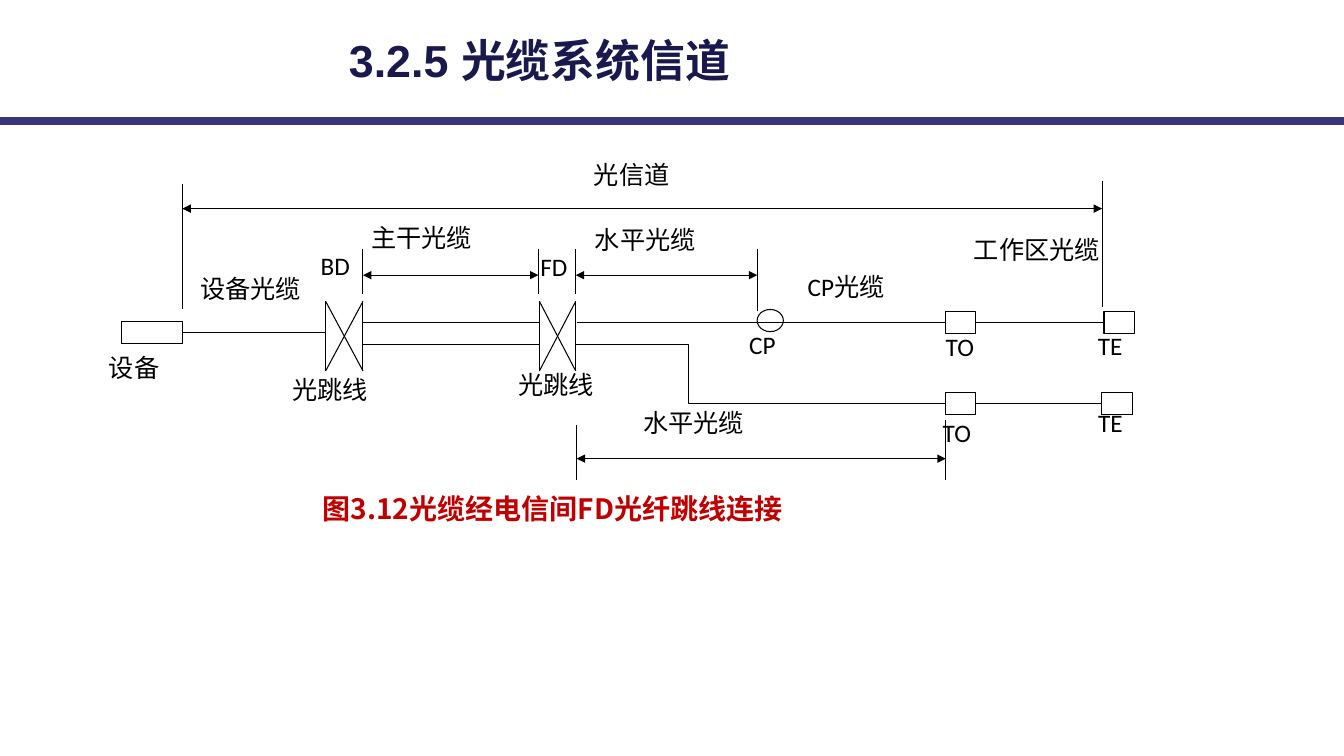
from dataclasses import dataclass

from lxml.etree import SubElement
from pptx import Presentation
from pptx.dml.color import RGBColor
from pptx.enum.shapes import MSO_CONNECTOR, MSO_SHAPE
from pptx.enum.text import MSO_ANCHOR, MSO_AUTO_SIZE, PP_ALIGN
from pptx.oxml.ns import qn
from pptx.shapes.autoshape import Shape
from pptx.shapes.connector import Connector
from pptx.slide import Slide
from pptx.text.text import _Paragraph as Paragraph
from pptx.util import Inches, Pt

CJK_FONT = "Noto Sans CJK SC"
BLACK, WHITE, RED = "000000", "FFFFFF", "C00000"
NAVY, PURPLE = "19194D", "3A357B"
LEFT_SIDE, RIGHT_SIDE = 1, 3


@dataclass
class Label:
    text: str
    left: float
    top: float
    width: float
    height: float = 0.49
    align: PP_ALIGN = PP_ALIGN.JUSTIFY
    size: int = 18
    font: str = "Calibri"
    color: str = BLACK
    bold: bool = False


@dataclass
class Dimension:
    """A double arrow between two extension lines."""
    left: float
    right: float
    y: float
    left_span: tuple[float, float]
    right_span: tuple[float, float]


LABELS = [
    Label("光信道", 5.89, 1.6, 1.05, 0.46),
    Label("主干光缆", 3.68, 2.23, 1.31),
    Label("水平光缆", 5.9, 2.24, 1.32),
    Label("工作区光缆", 9.66, 2.34, 1.26, 0.75),
    Label("BD", 3.18, 2.5, 0.42),
    Label("FD", 5.36, 2.51, 0.42),
    Label("CP光缆", 8.01, 2.71, 1.15),
    Label("设备光缆", 1.85, 2.73, 1.27, align=PP_ALIGN.CENTER),
    Label("CP", 7.43, 3.29, 0.42, 0.39),
    Label("TO", 9.38, 3.31, 0.42, 0.38),
    Label("TE", 10.89, 3.3, 0.46, 0.43),
    Label("设备", 1.08, 3.51, 0.73),
    Label("光跳线", 2.9, 3.73, 1.06, 0.38),
    Label("光跳线", 5.14, 3.68, 0.93),
    Label("水平光缆", 6.38, 4.06, 1.63),
    Label("TO", 9.35, 4.16, 0.42),
    Label("TE", 10.89, 4.06, 0.42),
    Label("图3.12光缆经电信间FD光纤跳线连接", 3.2, 4.9, 5.71, 0.58,
          size=20, font=CJK_FONT, color=RED, bold=True),
]

DIMENSIONS = [
    Dimension(1.81, 10.93, 2.07, (1.83, 3.07), (1.8, 3.05)),
    Dimension(3.6, 5.34, 2.73, (2.47, 2.92), (2.47, 2.92)),
    Dimension(5.71, 7.51, 2.73, (2.47, 2.92), (2.47, 3.09)),
    Dimension(5.72, 9.38, 4.55, (4.22, 4.76), (4.17, 4.76)),
]


def rgb(value: str) -> RGBColor:
    return RGBColor.from_string(value)


def format_text(para: Paragraph, font: str, size: int, color: str, bold: bool) -> None:
    for span in para.runs:
        span.font.name = font
        span.font.size = Pt(size)
        span.font.bold = bold
        span.font.color.rgb = rgb(color)
        SubElement(span.font._element, qn("a:ea"), typeface=CJK_FONT)


def add_box(page: Slide, kind: MSO_SHAPE, left: float, top: float,
            width: float, height: float, line: str = BLACK) -> Shape:
    box = page.shapes.add_shape(kind, Inches(left), Inches(top), Inches(width), Inches(height))
    box.shadow.inherit = False
    box.fill.solid()
    box.fill.fore_color.rgb = rgb(WHITE)
    box.line.color.rgb = rgb(line)
    box.line.width = Pt(0.75)
    return box


def add_label(page: Slide, label: Label) -> None:
    box = add_box(page, MSO_SHAPE.RECTANGLE, label.left, label.top,
                  label.width, label.height, WHITE)
    frame = box.text_frame
    frame.word_wrap = True
    frame.vertical_anchor = MSO_ANCHOR.TOP
    frame.margin_left = frame.margin_right = frame.margin_top = frame.margin_bottom = 0
    frame.text = label.text
    para = frame.paragraphs[0]
    para.alignment = label.align
    para.line_spacing = 0.96
    format_text(para, label.font, label.size, label.color, label.bold)


def add_line(page: Slide, x1: float, y1: float, x2: float, y2: float,
             color: str = BLACK, width: float = 0.75, arrows: bool = False) -> Connector:
    line = page.shapes.add_connector(
        MSO_CONNECTOR.STRAIGHT, Inches(x1), Inches(y1), Inches(x2), Inches(y2))
    line.line.color.rgb = rgb(color)
    line.line.width = Pt(width)
    if arrows:
        for end in ("a:headEnd", "a:tailEnd"):
            SubElement(line.line._get_or_add_ln(), qn(end), type="triangle")
    SubElement(line._element.spPr, qn("a:effectLst"))
    return line


def add_dimension(page: Slide, item: Dimension) -> None:
    for x, (top, bottom) in ((item.left, item.left_span), (item.right, item.right_span)):
        add_line(page, x, top, x, bottom)
    add_line(page, item.left, item.y, item.right, item.y, arrows=True)


def add_distributor(page: Slide, left: float, right: float) -> None:
    for x1, x2 in ((left, left), (right, right), (right, left), (left, right)):
        add_line(page, x1, 2.99, x2, 3.68)


def add_outlet_pair(page: Slide, top: float, terminal_left: float) -> Shape:
    outlet, terminal = (add_box(page, MSO_SHAPE.RECTANGLE, left, top, 0.3, 0.22)
                        for left in (9.38, terminal_left))
    cable = add_line(page, 9.68, top + 0.11, terminal_left, top + 0.11)
    cable.begin_connect(outlet, RIGHT_SIDE)
    cable.end_connect(terminal, LEFT_SIDE)
    return outlet


def add_title(page: Slide) -> None:
    title = page.shapes.title
    title.left, title.top = Inches(3.36), Inches(0.28)
    title.width, title.height = Inches(7.06), Inches(0.63)
    frame = title.text_frame
    frame.text = "3.2.5 光缆系统信道"
    frame.auto_size = MSO_AUTO_SIZE.NONE
    frame.vertical_anchor = MSO_ANCHOR.MIDDLE
    frame.paragraphs[0].alignment = PP_ALIGN.LEFT
    format_text(frame.paragraphs[0], "Arial", 32, NAVY, True)


def add_diagram(page: Slide) -> None:
    # Labels lie beneath the lines
    for label in LABELS:
        add_label(page, label)

    # Equipment and distributors
    equipment = add_box(page, MSO_SHAPE.RECTANGLE, 1.21, 3.19, 0.6, 0.22)
    equipment_cable = add_line(page, 1.81, 3.3, 3.23, 3.3)
    equipment_cable.begin_connect(equipment, RIGHT_SIDE)
    for left, right in ((3.23, 3.6), (5.35, 5.71)):
        add_distributor(page, left, right)
    for y in (3.2, 3.42):
        add_line(page, 3.6, y, 5.35, y)

    # Outlets, consolidation point and horizontal cables
    upper_outlet = add_outlet_pair(page, 3.09, 10.95)
    add_outlet_pair(page, 3.89, 10.93)
    add_box(page, MSO_SHAPE.OVAL, 7.51, 3.07, 0.26, 0.22)
    upper_cable = add_line(page, 5.72, 3.2, 9.38, 3.2)
    upper_cable.end_connect(upper_outlet, LEFT_SIDE)
    route = page.shapes.build_freeform(Inches(5.71), Inches(3.42))
    corners = ((6.83, 3.42), (6.83, 4), (9.38, 4))
    route.add_line_segments([(Inches(x), Inches(y)) for x, y in corners], close=False)
    lower_cable = route.convert_to_shape()
    lower_cable.shadow.inherit = False
    lower_cable.fill.background()
    lower_cable.line.color.rgb = rgb(BLACK)
    lower_cable.line.width = Pt(0.75)

    # Cable extents
    for item in DIMENSIONS:
        add_dimension(page, item)


def main() -> None:
    deck = Presentation()
    deck.slide_width, deck.slide_height = Inches(13.33), Inches(7.5)
    page = deck.slides.add_slide(deck.slide_layouts[5])
    add_line(page, 0, 1.2, 13.33, 1.2, PURPLE, 5.75)
    add_title(page)
    add_diagram(page)
    deck.save("out.pptx")


if __name__ == "__main__":
    main()
